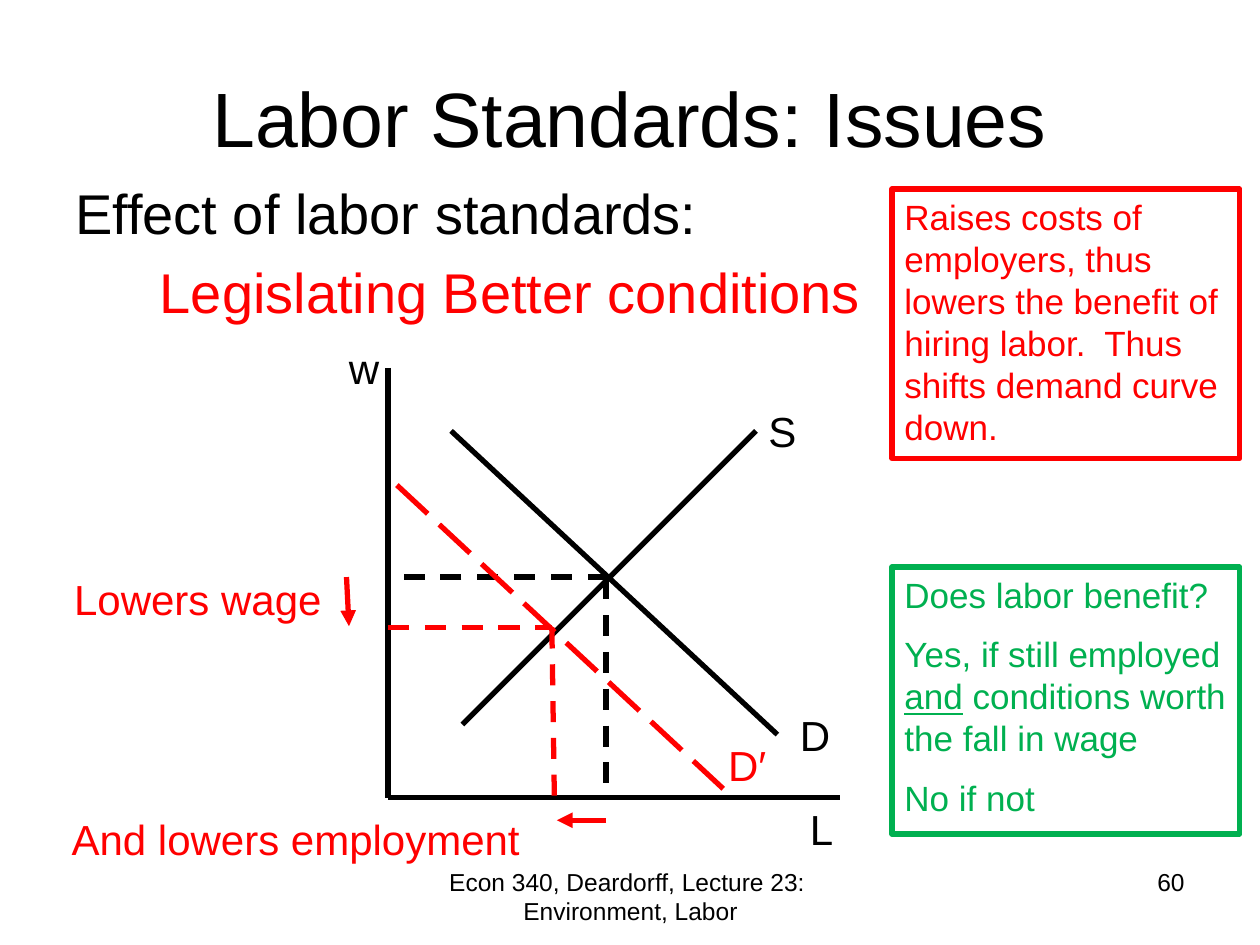
import pptx
import pptx.util
import pptx.dml.color
import pptx.enum.dml
import pptx.enum.shapes
import pptx.enum.text
import pptx.oxml

Inches, Pt = pptx.util.Inches, pptx.util.Pt
ALIGN = pptx.enum.text.PP_ALIGN
ANCHOR = pptx.enum.text.MSO_ANCHOR
DASH = pptx.enum.dml.MSO_LINE.DASH
LONG_DASH = pptx.enum.dml.MSO_LINE.LONG_DASH

COLORS = {"black": "000000", "red": "FF0000", "green": "00B050"}
LINE_WIDTH = 3

# Text, (left, top, width, height), size, color, alignment, anchor, wrap
HEADINGS = [
    ("Econ 340, Deardorff, Lecture 23:  Environment, Labor",
     (3.42, 6.83, 3.17, 0.52), 14, "black", ALIGN.CENTER, ANCHOR.TOP, True),
    ("60", (7.17, 6.83, 2.33, 0.52), 14, "black", ALIGN.RIGHT, ANCHOR.TOP, True),
    ("Labor Standards: Issues",
     (0.5, 0.3, 9, 1.25), 44, "black", ALIGN.CENTER, ANCHOR.MIDDLE, True),
    ("Lowers wage", (0.49, 4.5, 2.17, 0.5), 24, "red", ALIGN.LEFT, ANCHOR.TOP, False),
    ("And lowers employment",
     (0.47, 6.41, 3.76, 0.5), 24, "red", ALIGN.LEFT, ANCHOR.TOP, False),
]

# Text, color, left indent
BODY_BOX = (0.5, 1.37, 9, 5.33)
BODY = [("Effect of labor standards:", "black", 0),
        ("Legislating Better conditions", "red", 0.67)]

# Text, left, top, color
DIAGRAM_LABELS = [
    ("D", 6.25, 5.58, "black"),
    ("L", 6.33, 6.33, "black"),
    ("S", 6, 3.17, "black"),
    ("w", 2.67, 2.67, "black"),
    ("D′", 5.68, 5.82, "red"),
]
LABEL_SIZE = (0.92, 0.5)

# Start, end, color, dash, arrowhead
ORIGIN = (3.08, 6.33)
NEW_EQUILIBRIUM = (4.38, 4.98)
DIAGRAM_LINES = [
    ((3.08, 2.92), ORIGIN, "black", None, False),                    # wage axis
    (ORIGIN, (6.67, 6.33), "black", None, False),                    # labor axis
    ((3.67, 5.75), (6, 3.42), "black", None, False),                 # supply
    ((3.58, 3.42), (6.17, 5.83), "black", None, False),              # demand
    ((4.83, 4.58), (3.08, 4.58), "black", DASH, False),              # old wage
    ((2.75, 4.58), (2.77, 4.97), "red", None, True),                 # wage falls
    ((4.81, 4.59), (4.81, 6.32), "black", DASH, False),              # old employment
    (NEW_EQUILIBRIUM, (4.4, 6.35), "red", DASH, False),              # new employment
    ((4.81, 6.51), (4.42, 6.51), "red", None, True),                 # employment falls
    ((3.15, 3.85), (5.74, 6.26), "red", LONG_DASH, False),           # new demand
    ((3.08, 4.98), NEW_EQUILIBRIUM, "red", DASH, False),             # new wage
]

# Box, color, paragraphs made of (text, underlined) runs
NOTES = [
    ((7.08, 1.5, 2.76, 2.14), "red", [
        [("Raises costs of employers, thus lowers the benefit of hiring labor.  "
          "Thus shifts demand curve down.", False)]]),
    ((7.08, 4.5, 2.76, 2.12), "green", [
        [("Does labor benefit?", False)],
        [("Yes, if still employed ", False), ("and", True),
         (" conditions worth the fall in wage", False)],
        [("No if not", False)]]),
]


def rgb(color):
    return pptx.dml.color.RGBColor.from_string(COLORS[color])


def set_font(paragraph, size, color):
    paragraph.font.name = "Arial"
    paragraph.font.size = Pt(size)
    paragraph.font.color.rgb = rgb(color)


def paragraph_at(frame, index):
    return frame.add_paragraph() if index else frame.paragraphs[0]


def add_text(slide, text, box, size, color,
             align=ALIGN.LEFT, anchor=ANCHOR.TOP, wrap=True):
    frame = slide.shapes.add_textbox(*map(Inches, box)).text_frame
    frame.word_wrap = wrap
    frame.vertical_anchor = anchor
    paragraph = frame.paragraphs[0]
    paragraph.text = text
    paragraph.alignment = align
    set_font(paragraph, size, color)


def add_body(slide):
    frame = slide.shapes.add_textbox(*map(Inches, BODY_BOX)).text_frame
    frame.word_wrap = True
    for index, (text, color, indent) in enumerate(BODY):
        paragraph = paragraph_at(frame, index)
        paragraph.text = text
        paragraph.space_before = Pt(6.4)
        set_font(paragraph, 32, color)
        paragraph._p.get_or_add_pPr().set("marL", str(Inches(indent)))


def add_line(slide, start, end, color, dash, arrow):
    connector = slide.shapes.add_connector(
        pptx.enum.shapes.MSO_CONNECTOR.STRAIGHT, *map(Inches, start + end))
    connector.line.color.rgb = rgb(color)
    connector.line.width = Pt(LINE_WIDTH)
    if dash:
        connector.line.dash_style = dash
    if arrow:
        connector.line._get_or_add_ln().append(pptx.oxml.parse_xml(
            '<a:tailEnd xmlns:a="http://schemas.openxmlformats.org/drawingml/2006/main"'
            ' type="triangle"/>'))
    connector._element.spPr.append(pptx.oxml.parse_xml(
        '<a:effectLst xmlns:a="http://schemas.openxmlformats.org/drawingml/2006/main"/>'))


def add_note(slide, box, color, paragraphs):
    note = slide.shapes.add_shape(
        pptx.enum.shapes.MSO_SHAPE.RECTANGLE, *map(Inches, box))
    note.shadow.inherit = False
    note.fill.background()
    note.line.color.rgb = rgb(color)
    note.line.width = Pt(LINE_WIDTH)
    frame = note.text_frame
    frame.word_wrap = True
    frame.vertical_anchor = ANCHOR.TOP
    for index, runs in enumerate(paragraphs):
        paragraph = paragraph_at(frame, index)
        paragraph.alignment = ALIGN.LEFT
        if index:
            paragraph.space_before = Pt(10)
        set_font(paragraph, 20, color)
        for text, underlined in runs:
            run = paragraph.add_run()
            run.text = text
            if underlined:
                run.font.underline = True


def main():
    deck = pptx.Presentation()
    deck.slide_width, deck.slide_height = Inches(10), Inches(7.5)
    slide = deck.slides.add_slide(deck.slide_layouts[6])
    for heading in HEADINGS:
        add_text(slide, *heading)
    add_body(slide)
    for line in DIAGRAM_LINES:
        add_line(slide, *line)
    for text, left, top, color in DIAGRAM_LABELS:
        add_text(slide, text, (left, top) + LABEL_SIZE, 24, color)
    for note in NOTES:
        add_note(slide, *note)
    deck.save("out.pptx")


if __name__ == "__main__":
    main()
